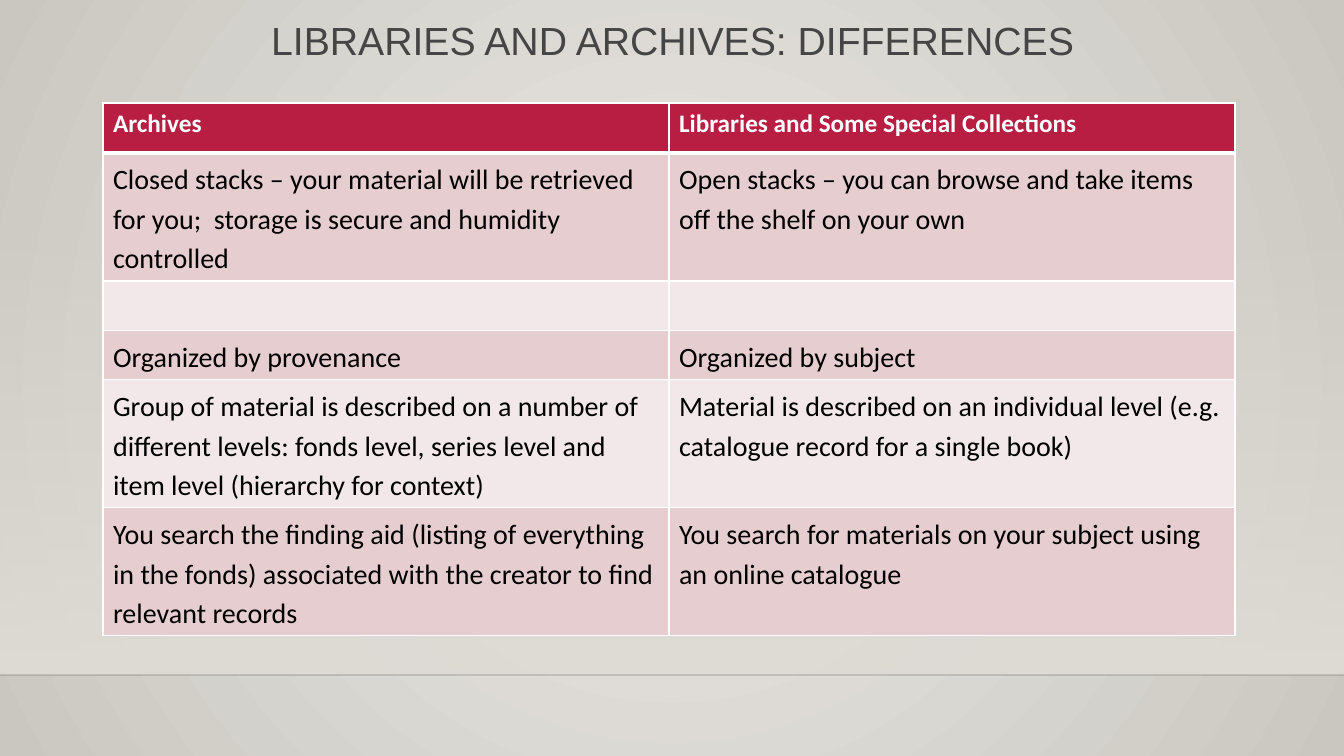
"""Build the slide that compares archives with libraries."""
from dataclasses import dataclass
from typing import Any

import lxml.etree
import pptx
import pptx.dml.color
import pptx.enum.shapes
import pptx.enum.text
import pptx.oxml.ns
import pptx.util

EMU_PER_PX = 914400 / 100.8
SLIDE_WIDTH, SLIDE_HEIGHT = 1344, 756
HORIZON = 675


@dataclass(frozen=True)
class Theme:
    backdrop_center: str = "ECEAE7"
    backdrop_edge: str = "CAC7C1"
    wall: str = "DFDBD5"
    horizon: str = "000001"
    title: str = "454545"
    body: str = "000000"
    white: str = "FFFFFF"
    header_fill: str = "B71E42"
    band_fills: tuple[str, str] = ("E6CDCF", "F3E8E9")
    title_font: str = "Arial"
    table_font: str = "Calibri"
    title_size: int = 28
    header_size: int = 18
    body_size: int = 20


@dataclass(frozen=True)
class Row:
    height: int
    archives: str = ""
    libraries: str = ""


THEME = Theme()
ROWS = [
    Row(50, "Archives", "Libraries and Some Special Collections"),
    Row(128,
        "Closed stacks – your material will be retrieved for you;  storage is "
        "secure and humidity controlled",
        "Open stacks – you can browse and take items off the shelf on your own"),
    Row(50),
    Row(49, "Organized by provenance", "Organized by subject"),
    Row(128,
        "Group of material is described on a number of different levels: fonds "
        "level, series level and item level (hierarchy for context)",
        "Material is described on an individual level (e.g. catalogue record "
        "for a single book)"),
    Row(128,
        "You search the finding aid (listing of everything in the fonds) "
        "associated with the creator to find relevant records",
        "You search for materials on your subject using an online catalogue"),
]


def px(*lengths: int) -> list[pptx.util.Emu]:
    return [pptx.util.Emu(round(length * EMU_PER_PX)) for length in lengths]


def rgb(color: str) -> pptx.dml.color.RGBColor:
    return pptx.dml.color.RGBColor.from_string(color)


def add_element(parent: Any, tag: str, **attributes: str) -> Any:
    return lxml.etree.SubElement(parent, pptx.oxml.ns.qn(tag), attributes)


def apply_format(target: Any, values: dict[str, Any]) -> None:
    for name, value in values.items():
        setattr(target, name, value)


def write_text(frame: Any, text: str, font: dict[str, Any], color: str,
               layout: dict[str, Any]) -> None:
    paragraph = frame.paragraphs[0]
    apply_format(paragraph, layout)
    run = paragraph.add_run()
    run.text = text
    apply_format(run.font, font)
    run.font.color.rgb = rgb(color)


def set_gradient(fill: Any, colors: tuple[str, str]) -> None:
    fill.gradient()
    for stop, color in zip(fill.gradient_stops, colors):
        stop.color.rgb = rgb(color)


def draw_backdrop(slide: Any) -> None:
    set_gradient(slide.background.fill, (THEME.backdrop_center, THEME.backdrop_edge))
    gradient = slide.element.xpath(".//p:bg//a:gradFill")[0]
    for linear in gradient.xpath("a:lin"):
        gradient.remove(linear)
    circle = add_element(gradient, "a:path", path="circle")
    add_element(circle, "a:fillToRect", l="50000", t="50000", r="50000", b="50000")

    top = 223
    wall = slide.shapes.add_shape(pptx.enum.shapes.MSO_SHAPE.RECTANGLE,
                                  *px(0, top, SLIDE_WIDTH, HORIZON - top))
    wall.shadow.inherit = False
    wall.line.fill.background()
    set_gradient(wall.fill, (THEME.wall, THEME.wall))
    wall.fill.gradient_angle = 270
    clear_color = wall.element.xpath(".//a:gs/a:srgbClr")[0]
    add_element(clear_color, "a:alpha", val="0")

    horizon = slide.shapes.add_connector(pptx.enum.shapes.MSO_CONNECTOR.STRAIGHT,
                                         *px(0, HORIZON, SLIDE_WIDTH, HORIZON))
    horizon.line.width = pptx.util.Pt(1)
    horizon.line.color.rgb = rgb(THEME.horizon)
    add_element(horizon.element.xpath(".//a:ln//a:srgbClr")[0], "a:alpha", val="20000")
    add_element(horizon.element.spPr, "a:effectLst")


def draw_title(slide: Any) -> None:
    shape = slide.shapes.add_textbox(*px(219, 17, 907, 84))
    shape.text_frame.word_wrap = True
    write_text(shape.text_frame, "LIBRARIES AND ARCHIVES: DIFFERENCES",
               {"name": THEME.title_font, "size": pptx.util.Pt(THEME.title_size)},
               THEME.title,
               {"alignment": pptx.enum.text.PP_ALIGN.CENTER, "line_spacing": 0.9})


def set_borders(cell: Any, widths: dict[str, int]) -> None:
    properties = cell._tc.get_or_add_tcPr()
    for side, points in widths.items():
        line = add_element(properties, f"a:ln{side}", w=str(pptx.util.Pt(points)))
        solid = add_element(line, "a:solidFill")
        add_element(solid, "a:srgbClr", val=THEME.white)


def draw_table(slide: Any) -> None:
    column_width = 566
    frame = slide.shapes.add_table(
        len(ROWS), 2,
        *px(103, 103, 2 * column_width, sum(row.height for row in ROWS)))
    table = frame.table
    table.horz_banding = False
    for column in table.columns:
        column.width = px(column_width)[0]
    for index, row in enumerate(ROWS):
        header = index == 0
        table.rows[index].height = px(row.height)[0]
        size = THEME.header_size if header else THEME.body_size
        font = {"name": THEME.table_font, "size": pptx.util.Pt(size), "bold": header}
        color = THEME.white if header else THEME.body
        fill = THEME.header_fill if header else THEME.band_fills[(index - 1) % 2]
        layout = {} if header else {"line_spacing": 1.15}
        borders = {"L": 1, "R": 1, "T": 3 if index == 1 else 1, "B": 3 if header else 1}
        for cell, text in zip(table.rows[index].cells, (row.archives, row.libraries)):
            set_borders(cell, borders)
            cell.fill.solid()
            cell.fill.fore_color.rgb = rgb(fill)
            if text:
                write_text(cell.text_frame, text, font, color, layout)


def main() -> None:
    presentation = pptx.Presentation()
    width, height = px(SLIDE_WIDTH, SLIDE_HEIGHT)
    apply_format(presentation, {"slide_width": width, "slide_height": height})
    slide = presentation.slides.add_slide(presentation.slide_layouts[6])
    draw_backdrop(slide)
    draw_title(slide)
    draw_table(slide)
    presentation.save("out.pptx")


if __name__ == "__main__":
    main()
